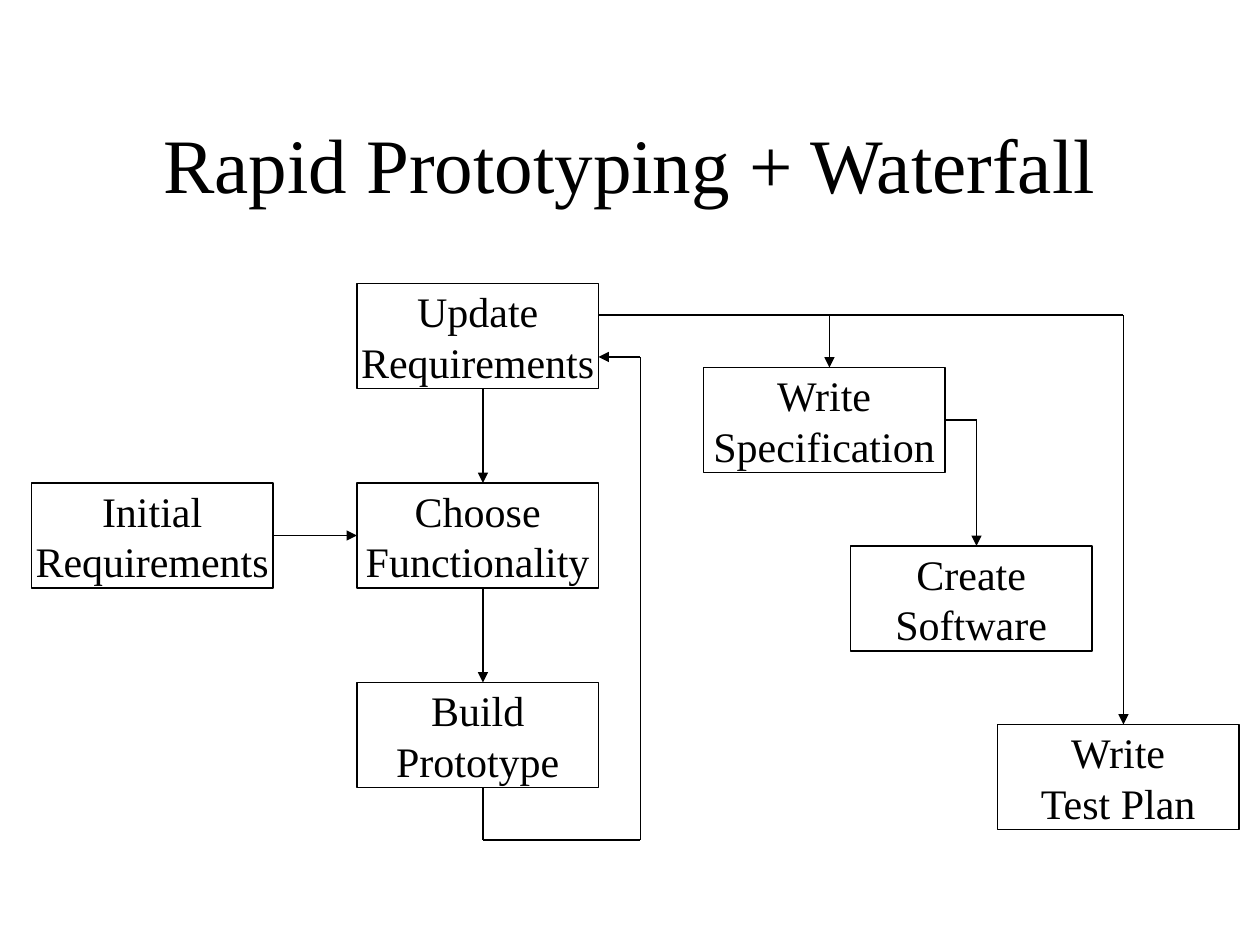
from itertools import pairwise

from lxml.etree import SubElement
from pptx import Presentation
from pptx.dml.color import RGBColor
from pptx.enum.shapes import MSO_CONNECTOR as Connector, MSO_SHAPE as Shape
from pptx.enum.text import MSO_ANCHOR as Anchor, PP_ALIGN as Align
from pptx.oxml.ns import qn
from pptx.util import Inches, Pt

COLORS = {"ink": "000000"}
UNIT = Inches(1) / 12  # the slide is a grid of 120 columns and 90 rows
STEP_SIZE = (23, 10)

STEPS = [
    (34, 27, "Update\nRequirements"),
    (34, 46, "Choose\nFunctionality"),
    (34, 65, "Build\nPrototype"),
    (3, 46, "Initial\nRequirements"),
    (67, 35, "Write\nSpecification"),
    (81, 52, "Create\nSoftware"),
    (95, 69, "Write\nTest Plan"),
]

FLOWS = [
    [(46, 37), (46, 46)],
    [(46, 56), (46, 65)],
    [(26, 51), (34, 51)],
    [(46, 75), (46, 80), (61, 80), (61, 34), (57, 34)],
    [(57, 30), (107, 30), (107, 69)],
    [(79, 30), (79, 35)],
    [(90, 40), (93, 40), (93, 52)],
]


class FlowSlide:
    font = "Times New Roman"
    ink = RGBColor.from_string(COLORS["ink"])
    line_width = Pt(1)

    def __init__(self, deck):
        self.slide = deck.slides.add_slide(deck.slide_layouts[6])

    @staticmethod
    def grid(*cells):
        return [round(cell * UNIT) for cell in cells]

    def stroke(self, line):
        line.color.rgb = self.ink
        line.width = self.line_width

    def label(self, frame, text, size, wrap):
        frame.text = text
        frame.word_wrap = wrap
        frame.vertical_anchor = Anchor.MIDDLE
        font_format = {"name": self.font, "size": Pt(size)}
        for paragraph in frame.paragraphs:
            paragraph.alignment = Align.CENTER
            for run in paragraph.runs:
                for attribute, value in font_format.items():
                    setattr(run.font, attribute, value)
                run.font.color.rgb = self.ink

    def title(self, text):
        heading = self.slide.shapes.add_textbox(*self.grid(9, 8, 102, 15))
        self.label(heading.text_frame, text, 44, True)

    def step(self, column, row, text):
        step = self.slide.shapes.add_shape(
            Shape.RECTANGLE, *self.grid(column, row, *STEP_SIZE))
        step.shadow.inherit = False
        step.fill.background()
        self.stroke(step.line)
        self.label(step.text_frame, text, 24, False)

    def flow(self, points):
        """Join the points with straight lines; the last one has an arrowhead."""
        for start, end in pairwise(points):
            segment = self.slide.shapes.add_connector(
                Connector.STRAIGHT, *self.grid(*start, *end))
            self.stroke(segment.line)
            properties = segment.element.spPr
            SubElement(properties, qn("a:effectLst"))
        SubElement(properties.find(qn("a:ln")), qn("a:tailEnd"), type="triangle")


def main():
    deck = Presentation()
    deck.slide_width, deck.slide_height = FlowSlide.grid(120, 90)
    process = FlowSlide(deck)
    process.title("Rapid Prototyping + Waterfall")
    for step in STEPS:
        process.step(*step)
    for points in FLOWS:
        process.flow(points)
    deck.save("out.pptx")


if __name__ == "__main__":
    main()
